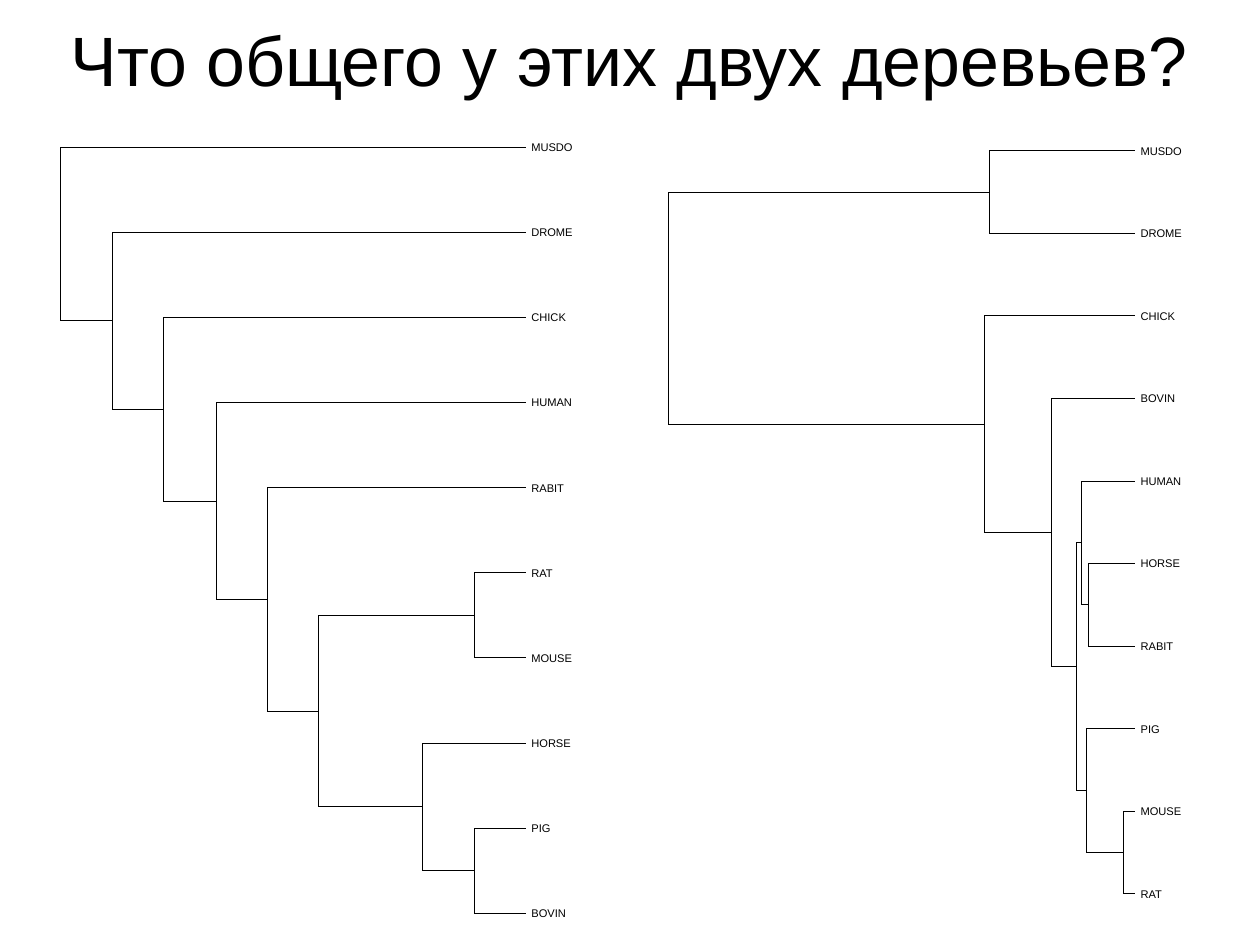
"""Slide that compares two species trees."""
from lxml import etree
from pptx import Presentation
from pptx import util as u
from pptx.dml.color import RGBColor
from pptx.enum import shapes, text
from pptx.oxml.ns import qn

INK = {"black": "000000", "white": "FFFFFF"}
BLACK = RGBColor.from_string(INK["black"])
WIDTHS = {"MUSDO": 0.37, "DROME": 0.37, "CHICK": 0.32, "HUMAN": 0.37, "RABIT": 0.3,
          "RAT": 0.2, "MOUSE": 0.37, "HORSE": 0.36, "PIG": 0.18, "BOVIN": 0.32}

deck = Presentation()
deck.slide_width = u.Inches(28 / 2.54)
deck.slide_height = u.Inches(21 / 2.54)
deck.element.find(qn("p:sldSz")).attrib.pop("type", None)
slide = deck.slides.add_slide(deck.slide_layouts[5])
slide.background.fill.solid()
slide.background.fill.fore_color.rgb = RGBColor.from_string(INK["white"])


def line(*ends):
    """Draw a black hairline between two points."""
    edge = slide.shapes.add_connector(shapes.MSO_CONNECTOR.STRAIGHT, *map(u.Inches, ends))
    edge.line.color.rgb = BLACK
    props = edge.element.spPr
    props.find(qn("a:ln")).set("w", "0")
    etree.SubElement(props, qn("a:effectLst"))


def grow(node, tip, rows):
    """Draw a leaf or a (x, upper, lower) fork and return its x and y."""
    if isinstance(node, str):
        y = next(rows)
        box = slide.shapes.add_textbox(*map(u.Inches, (tip + 0.05, y - 0.06, WIDTHS[node], 0.12)))
        frame = box.text_frame
        look = {"margin_left": 0, "margin_top": 0, "margin_right": 0, "margin_bottom": 0,
                "word_wrap": False, "auto_size": text.MSO_AUTO_SIZE.SHAPE_TO_FIT_TEXT}
        for key, val in look.items():
            setattr(frame, key, val)
        run = frame.paragraphs[0].add_run()
        run.text = node
        run.font.name, run.font.size = "Arial", u.Pt(7)
        run.font.color.rgb = BLACK
        return tip, y
    x, *kids = node
    ends = [grow(kid, tip, rows) for kid in kids]
    for end, y in ends:
        line(end, y, x, y)
    (_, top), (_, low) = ends
    line(x, top, x, low)
    return x, (top + low) / 2


left = (0.53, "MUSDO", (0.98, "DROME", (1.43, "CHICK", (1.89, "HUMAN", (
    2.34, "RABIT", (2.79, (4.15, "RAT", "MOUSE"),
                    (3.7, "HORSE", (4.15, "PIG", "BOVIN"))))))))
right = (5.85, (8.66, "MUSDO", "DROME"), (8.61, "CHICK", (9.2, "BOVIN", (
    9.42, (9.46, "HUMAN", (9.52, "HORSE", "RABIT")),
    (9.51, "PIG", (9.83, "MOUSE", "RAT"))))))

for tree, tip, top, span in ((left, 4.6, 1.29, 6.7), (right, 9.93, 1.32, 6.5)):
    grow(tree, tip, (top + span * i / 9 for i in range(10)))

title = slide.shapes.title
place = {"left": 0.55, "top": -0.16, "width": 9.92, "height": 1.38}
for key, val in place.items():
    setattr(title, key, u.Inches(val))
frame = title.text_frame
look = {"margin_left": 0, "margin_top": u.Inches(0.04), "margin_right": 0, "margin_bottom": 0,
        "word_wrap": True, "auto_size": text.MSO_AUTO_SIZE.NONE,
        "vertical_anchor": text.MSO_ANCHOR.MIDDLE}
for key, val in look.items():
    setattr(frame, key, val)
para = frame.paragraphs[0]
para.alignment, para.line_spacing = text.PP_ALIGN.CENTER, 0.93
run = para.add_run()
run.text = "Что общего у этих двух деревьев?"
run.font.name, run.font.size = "Arial", u.Pt(44)
run.font.color.rgb = BLACK

deck.save("out.pptx")
